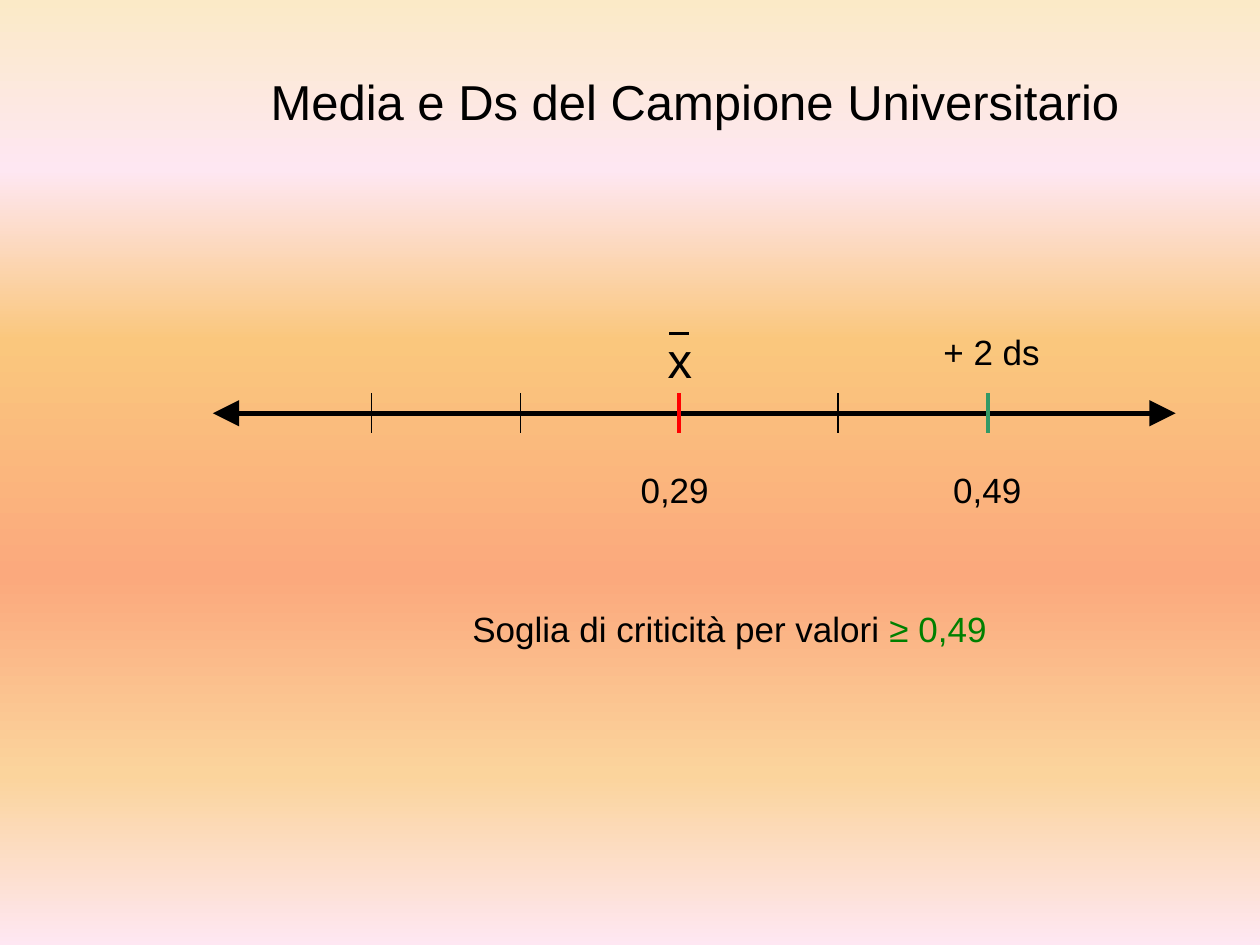
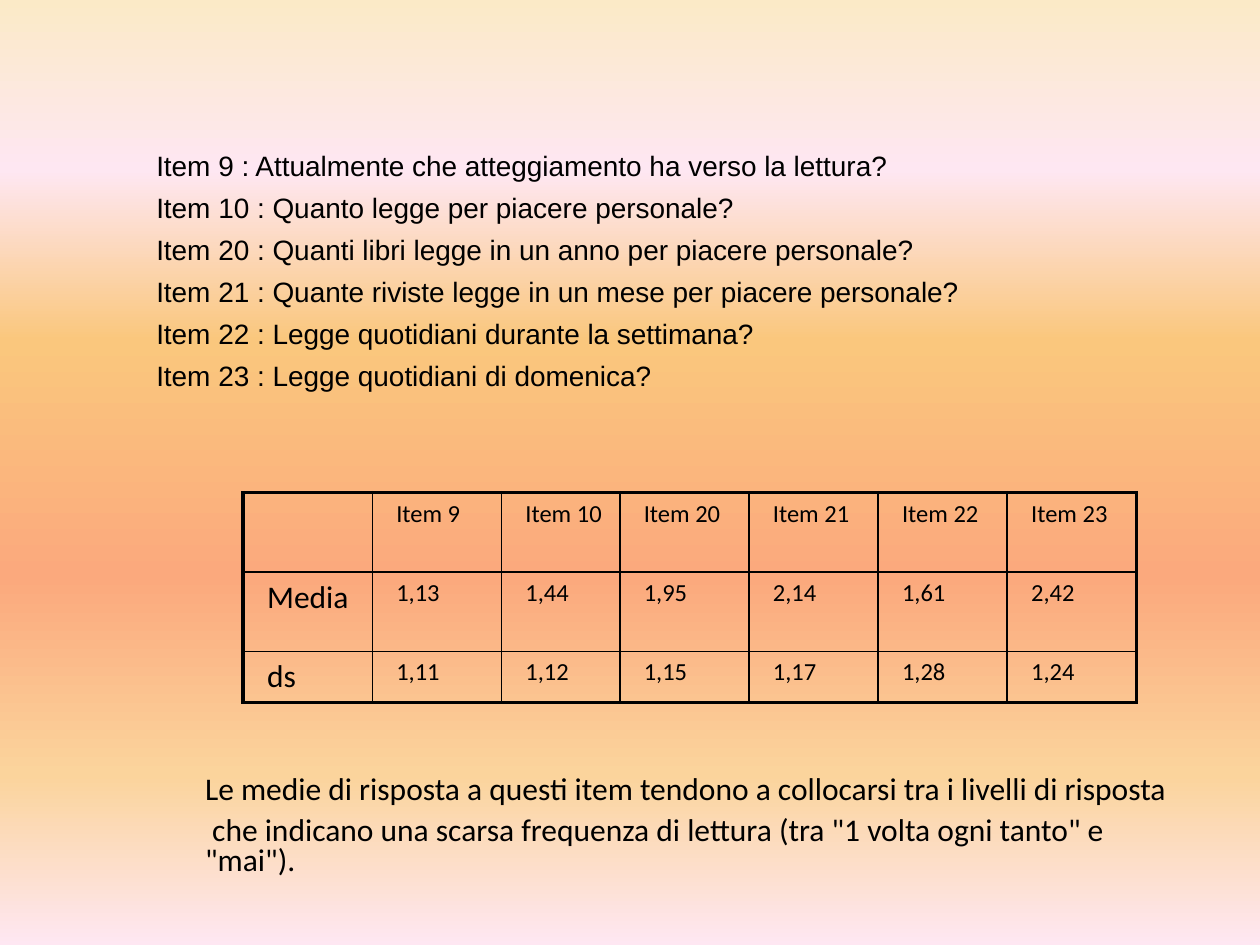
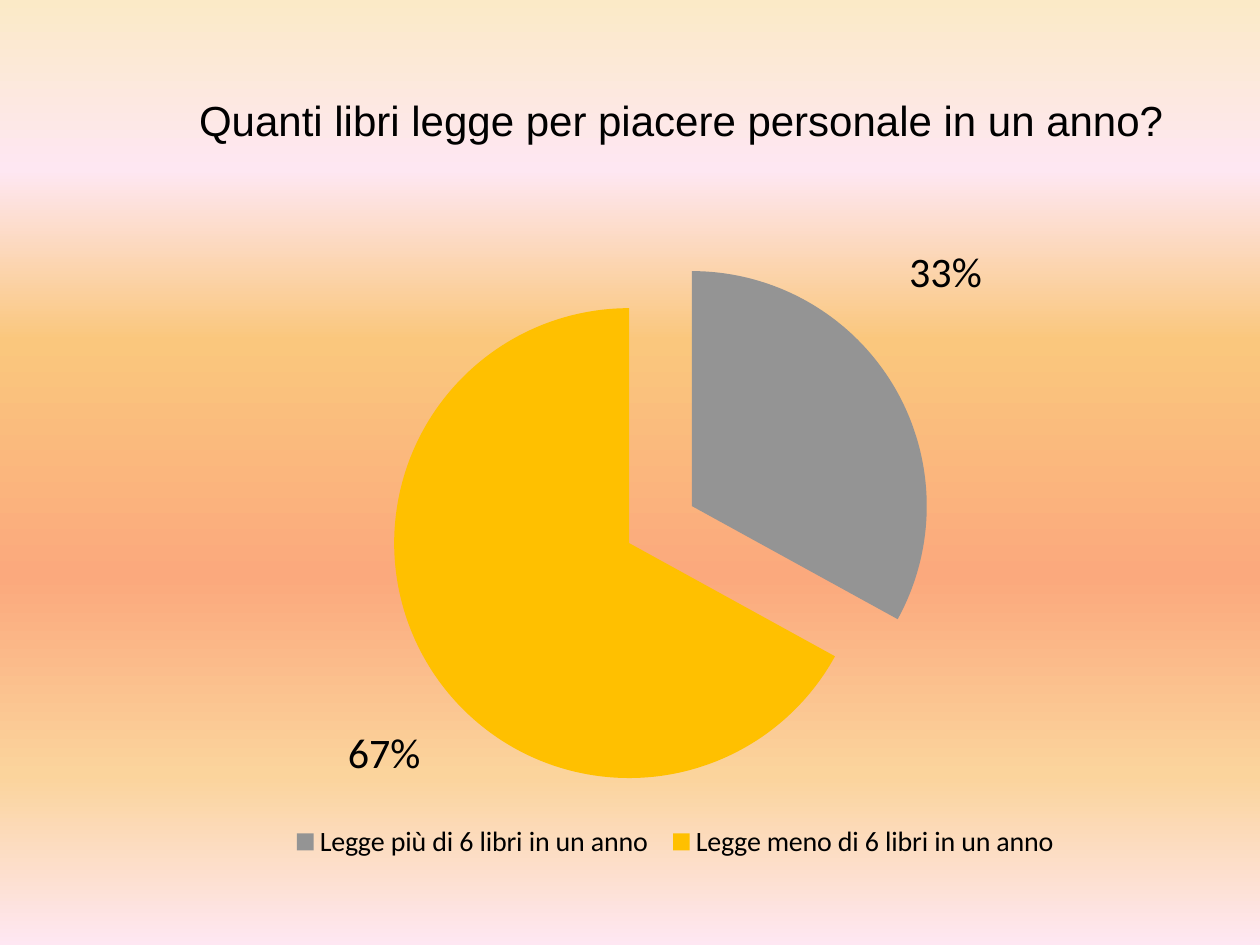
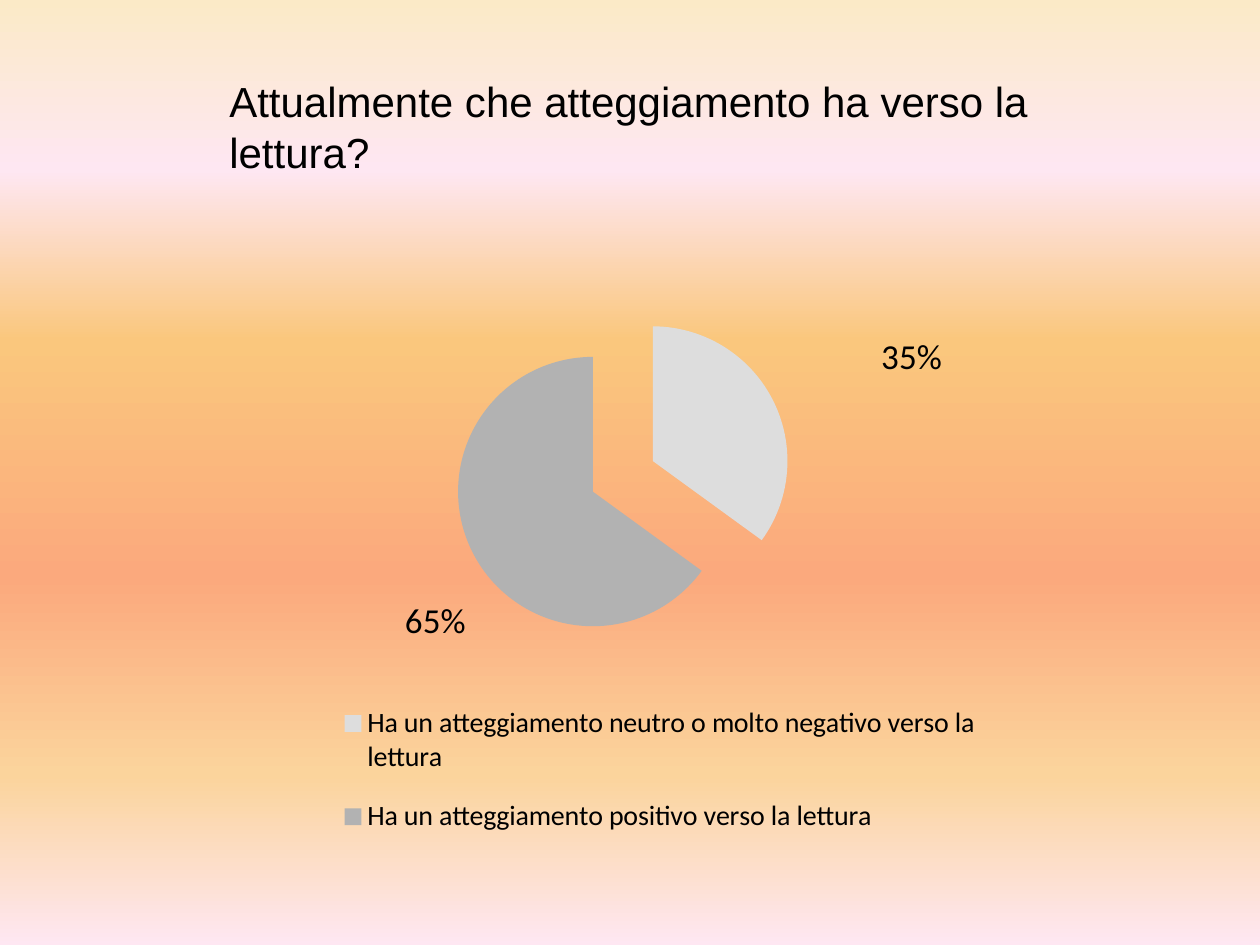
from dataclasses import dataclass

from lxml import etree
from pptx import Presentation
from pptx.chart.data import CategoryChartData
from pptx.dml.color import RGBColor
from pptx.enum.chart import XL_CHART_TYPE, XL_LABEL_POSITION, XL_LEGEND_POSITION
from pptx.enum.shapes import MSO_CONNECTOR
from pptx.enum.text import MSO_ANCHOR, MSO_AUTO_SIZE, PP_ALIGN
from pptx.oxml.ns import qn
from pptx.util import Inches, Pt

PIE = XL_CHART_TYPE.PIE
OUTSIDE_END = XL_LABEL_POSITION.OUTSIDE_END
LEGEND_RIGHT = XL_LEGEND_POSITION.RIGHT
STRAIGHT = MSO_CONNECTOR.STRAIGHT
TOP = MSO_ANCHOR.TOP
NO_AUTOFIT = MSO_AUTO_SIZE.NONE
LEFT, CENTER = PP_ALIGN.LEFT, PP_ALIGN.CENTER
TITLE_AND_CONTENT, TITLE_ONLY = 1, 5


@dataclass(frozen=True)
class Theme:
    heading_font: str = "Arial"
    body_font: str = "Calibri"
    text: str = "000000"
    mean: str = "FF0000"
    threshold: str = "339966"
    threshold_text: str = "008000"
    gradient: tuple = ((0, "FBEAC7"), (18, "FEE7F2"), (36, "FAC77D"),
                       (61, "FBA97D"), (82, "FBD49C"), (100, "FEE7F2"))
    large: int = 28
    title: int = 24
    label: int = 20
    body: int = 18
    list_item: int = 16
    cell: int = 14
    chart: int = 10
    outer_border: float = 2.25
    inner_border: float = 1


THEME = Theme()


def rgb(color):
    return RGBColor.from_string(color)


def style_font(font, size, name=THEME.heading_font, color=THEME.text):
    font.name = name
    font.size = Pt(size)
    font.color.rgb = rgb(color)


def set_background(master):
    """Give the master, and so every slide, the vertical gradient."""
    fill = master.background.fill
    fill.gradient()
    fill.gradient_angle = 270
    stops = master.element.find(".//" + qn("p:bg")).find(".//" + qn("a:gsLst"))
    for stop in list(stops):
        stops.remove(stop)
    for position, color in THEME.gradient:
        stop = etree.SubElement(stops, qn("a:gs"), pos=str(position * 1000))
        etree.SubElement(stop, qn("a:srgbClr"), val=color)


def place(sp, box):
    sp.left, sp.top, sp.width, sp.height = map(Inches, box)
    tf = sp.text_frame
    tf.word_wrap = True
    tf.auto_size = NO_AUTOFIT
    tf.vertical_anchor = TOP
    return tf


def add_title(s, text, box, size=THEME.title, align=LEFT):
    tf = place(s.shapes.title, box)
    tf.text = text
    p = tf.paragraphs[0]
    p.alignment = align
    style_font(p.runs[0].font, size)


def add_label(s, text, box, size=THEME.label):
    tf = place(s.shapes.add_textbox(0, 0, 0, 0), box)
    tf.text = text
    p = tf.paragraphs[0]
    p.alignment = CENTER
    style_font(p.runs[0].font, size)
    return p


def add_line(s, x1, y1, x2, y2, width, color=THEME.text, arrows=False):
    line = s.shapes.add_connector(STRAIGHT, *map(Inches, (x1, y1, x2, y2)))
    line.line.width = Pt(width)
    line.line.color.rgb = rgb(color)
    if arrows:
        ln = line.line._get_or_add_ln()
        for end in ("a:headEnd", "a:tailEnd"):
            etree.SubElement(ln, qn(end), type="triangle", w="lg", len="lg")
    etree.SubElement(line._element.spPr, qn("a:effectLst"))


def add_item_list(s, items, box):
    tf = place(s.placeholders[1], box)
    tf.margin_top = Inches(0.59)
    tf.text = "\n".join(items)
    for p in tf.paragraphs:
        p.line_spacing = 1.25
        p.space_before = Pt(0)
        pPr = p._p.get_or_add_pPr()
        pPr.set("marL", "0")
        pPr.set("indent", "0")
        etree.SubElement(pPr, qn("a:buNone"))
        style_font(p.runs[0].font, THEME.list_item)


def add_comment(s, lines, box):
    tf = place(s.shapes.add_textbox(0, 0, 0, 0), box)
    tf.margin_right = Inches(0.05)
    tf.text = "\n".join(lines)
    for p in tf.paragraphs:
        p.line_spacing = 0.8
        p.space_before = Pt(6)
        style_font(p.runs[0].font, THEME.body, THEME.body_font)


def set_borders(cell, outer):
    """Draw the four borders; sides named in outer get the heavy line."""
    tcPr = cell._tc.get_or_add_tcPr()
    for side in "LRTB":
        width = THEME.outer_border if side in outer else THEME.inner_border
        ln = etree.SubElement(tcPr, qn("a:ln" + side), w=str(Pt(width)))
        fill = etree.SubElement(ln, qn("a:solidFill"))
        etree.SubElement(fill, qn("a:srgbClr"), val=THEME.text)


def add_stat_table(s, rows, left, top, widths, heights):
    n_rows, n_cols = len(rows), len(rows[0])
    frame = s.shapes.add_table(n_rows, n_cols, Inches(left), Inches(top),
                               Inches(sum(widths)), Inches(sum(heights)))
    table = frame.table
    table.first_row = table.horz_banding = False
    for column, width in zip(table.columns, widths):
        column.width = Inches(width)
    for row, height in zip(table.rows, heights):
        row.height = Inches(height)
    for i, values in enumerate(rows):
        for j, value in enumerate(values):
            cell = table.cell(i, j)
            edges = {"L": j == 0, "R": j == n_cols - 1,
                     "T": i == 0, "B": i == n_rows - 1}
            set_borders(cell, [side for side in edges if edges[side]])
            cell.fill.background()
            if not value:
                continue
            cell.text = value
            p = cell.text_frame.paragraphs[0]
            p.space_before = Pt(6)
            p._p.get_or_add_pPr().set("marL", str(Inches(0.09)))
            size = THEME.body if j == 0 else THEME.cell
            style_font(p.runs[0].font, size, THEME.body_font)


def make_layout(**values):
    """Return a c:layout element holding the given manual settings."""
    layout = etree.Element(qn("c:layout"))
    manual = etree.SubElement(layout, qn("c:manualLayout"))
    for name, value in values.items():
        etree.SubElement(manual, qn("c:" + name), val=str(value))
    return layout


def box_layout(x, y, w, h, **target):
    return make_layout(**target, xMode="edge", yMode="edge", x=x, y=y, w=w, h=h)


def replace_layout(parent, layout, index):
    old = parent.find(qn("c:layout"))
    if old is not None:
        parent.remove(old)
    parent.insert(index, layout)


def set_explosion(ser, percent, first=None):
    """Pull all slices out by percent, the first one by its own amount."""
    dPts = ser.findall(qn("c:dPt"))
    explosion = etree.Element(qn("c:explosion"), val=str(percent))
    dPts[0].addprevious(explosion)
    for dPt, amount in zip(dPts, (first or percent, percent)):
        own = etree.Element(qn("c:explosion"), val=str(amount))
        dPt.find(qn("c:spPr")).addprevious(own)


def hide_leader_lines(labels):
    dLbls = labels._element
    leader = dLbls.find(qn("c:showLeaderLines"))
    if leader is None:
        leader = etree.SubElement(dLbls, qn("c:showLeaderLines"))
    leader.set("val", "0")


def add_point_label(point, size, offset):
    label = point.data_label
    style_font(label.font, size, THEME.body_font)
    label.position = OUTSIDE_END
    dLbl = label._dLbl
    replace_layout(dLbl, make_layout(x=offset[0], y=offset[1]), 1)
    dLbl.find(qn("c:showVal")).set("val", "0")
    dLbl.find(qn("c:showPercent")).set("val", "1")


def add_pie(s, box, slices, plot, legend_box, label_size, first_explosion=None):
    """Add a pie; slices are (category, value, colour, label offset)."""
    data = CategoryChartData()
    data.categories = [name for name, *_ in slices]
    data.add_series("Series 1", [value for _, value, *_ in slices])
    chart = s.shapes.add_chart(PIE, *map(Inches, box), data).chart
    chart.has_title = False
    style_font(chart.font, THEME.chart, THEME.body_font)

    chart.has_legend = True
    legend = chart.legend
    legend.position = LEGEND_RIGHT
    legend.include_in_layout = False
    style_font(legend.font, THEME.list_item, THEME.body_font)
    replace_layout(legend._element, box_layout(*legend_box), 1)

    plot_area = chart._chartSpace.chart.plotArea
    replace_layout(plot_area, box_layout(*plot, layoutTarget="inner"), 0)

    pie = chart.plots[0]
    pie.vary_by_categories = True
    series = pie.series[0]
    labels = series.data_labels
    labels.show_value = False
    labels.show_percentage = True
    labels.number_format = "0%"
    labels.number_format_is_linked = False
    style_font(labels.font, label_size, THEME.body_font)
    hide_leader_lines(labels)
    for i, (_, _, color, offset) in enumerate(slices):
        point = series.points[i]
        point.format.fill.solid()
        point.format.fill.fore_color.rgb = rgb(color)
        point.format.line.fill.background()
        add_point_label(point, label_size, offset)
    set_explosion(series._element, 25, first_explosion)


def add_slide(prs, layout=TITLE_ONLY):
    return prs.slides.add_slide(prs.slide_layouts[layout])


def build_mean_axis(prs):
    s = add_slide(prs)
    add_title(s, "Media e Ds del Campione Universitario",
              (1.46, 0.52, 8.11, 0.57), THEME.large, CENTER)
    add_line(s, 1.69, 3.28, 9.33, 3.28, 3, arrows=True)
    ticks = ((2.95, 0.75, THEME.text), (4.13, 0.75, THEME.text),
             (5.39, 2, THEME.mean), (6.65, 0.75, THEME.text),
             (7.84, 2, THEME.threshold))
    for x, width, color in ticks:
        add_line(s, x, 3.12, x, 3.44, width, color)
    add_label(s, "0,29", (4.92, 3.67, 0.87, 0.43))
    add_label(s, "0,49", (7.44, 3.67, 0.79, 0.43))
    add_label(s, "x", (5, 2.57, 0.79, 0.57), THEME.large)
    add_line(s, 5.31, 2.65, 5.47, 2.65, 1.75)
    add_label(s, "+ 2 ds", (7.28, 2.57, 1.18, 0.43))
    p = add_label(s, "Soglia di criticità per valori", (1.93, 4.77, 7.72, 0.93))
    r = p.add_run()
    r.text = " ≥ 0,49"
    style_font(r.font, THEME.label, color=THEME.threshold_text)


def build_item_means(prs):
    s = add_slide(prs, TITLE_AND_CONTENT)
    title = s.shapes.title.element
    title.getparent().remove(title)
    questions = {
        9: "Attualmente che atteggiamento ha verso la lettura?",
        10: "Quanto legge per piacere personale?",
        20: "Quanti libri legge in un anno per piacere personale?",
        21: "Quante riviste legge in un mese per piacere personale?",
        22: "Legge quotidiani durante la settimana?",
        23: "Legge quotidiani di domenica?",
    }
    add_item_list(s, [f"Item {n} : {q}" for n, q in questions.items()],
                  (1.14, 0.52, 8.59, 5.05))
    rows = (
        ["", *(f"Item {n}" for n in questions)],
        ["Media", "1,13", "1,44", "1,95", "2,14", "1,61", "2,42"],
        ["ds", "1,11", "1,12", "1,15", "1,17", "1,28", "1,24"],
    )
    table_width, narrow = 7.09, 0.94
    wide = (table_width - narrow) / len(questions)
    widths = [narrow if name == "Item 10" else wide for name in rows[0]]
    add_stat_table(s, rows, 1.93, 3.91, widths, (0.63, 0.63, 0.4))
    add_comment(s, (
        "Le medie di risposta a questi item tendono a collocarsi "
        "tra i livelli di risposta",
        " che indicano una scarsa frequenza di lettura "
        '(tra "1 volta ogni tanto" e "mai").',
    ), (1.53, 6.11, 7.83, 0.61))


def build_books_pie(prs):
    s = add_slide(prs)
    add_title(s, "Quanti libri legge per piacere personale in un anno?",
              (1.48, 0.7, 8.05, 0.51))
    add_pie(s, (1.95, 1.41, 7.03, 5.55), (
        ("Legge più di 6 libri in un anno", 33, "949494", (0.01, -0.12)),
        ("Legge meno di 6 libri in un anno", 67, "FFC000", (0, 0.09)),
    ), plot=(0.12, 0.06, 0.74, 0.84), legend_box=(0.04, 0.92, 0.89, 0.06),
        label_size=24, first_explosion=6)


def build_attitude_pie(prs):
    s = add_slide(prs)
    add_title(s, "Attualmente che atteggiamento ha verso la lettura?",
              (1.72, 0.55, 7.66, 0.91))
    add_pie(s, (1.64, 2.25, 7.34, 4.86), (
        ("Ha un atteggiamento neutro o molto negativo verso la lettura",
         35, "DDDDDD", (0.11, -0.03)),
        ("Ha un atteggiamento positivo verso la lettura",
         65, "B2B2B2", (0, 0.07)),
    ), plot=(0.01, 0.04, 0.88, 0.55), legend_box=(0.14, 0.65, 0.7, 0.29),
        label_size=20)


def main():
    prs = Presentation()
    prs.slide_width, prs.slide_height = Inches(10), Inches(7.5)
    set_background(prs.slide_master)
    build_mean_axis(prs)
    build_item_means(prs)
    build_books_pie(prs)
    build_attitude_pie(prs)
    prs.save("out.pptx")


if __name__ == "__main__":
    main()
